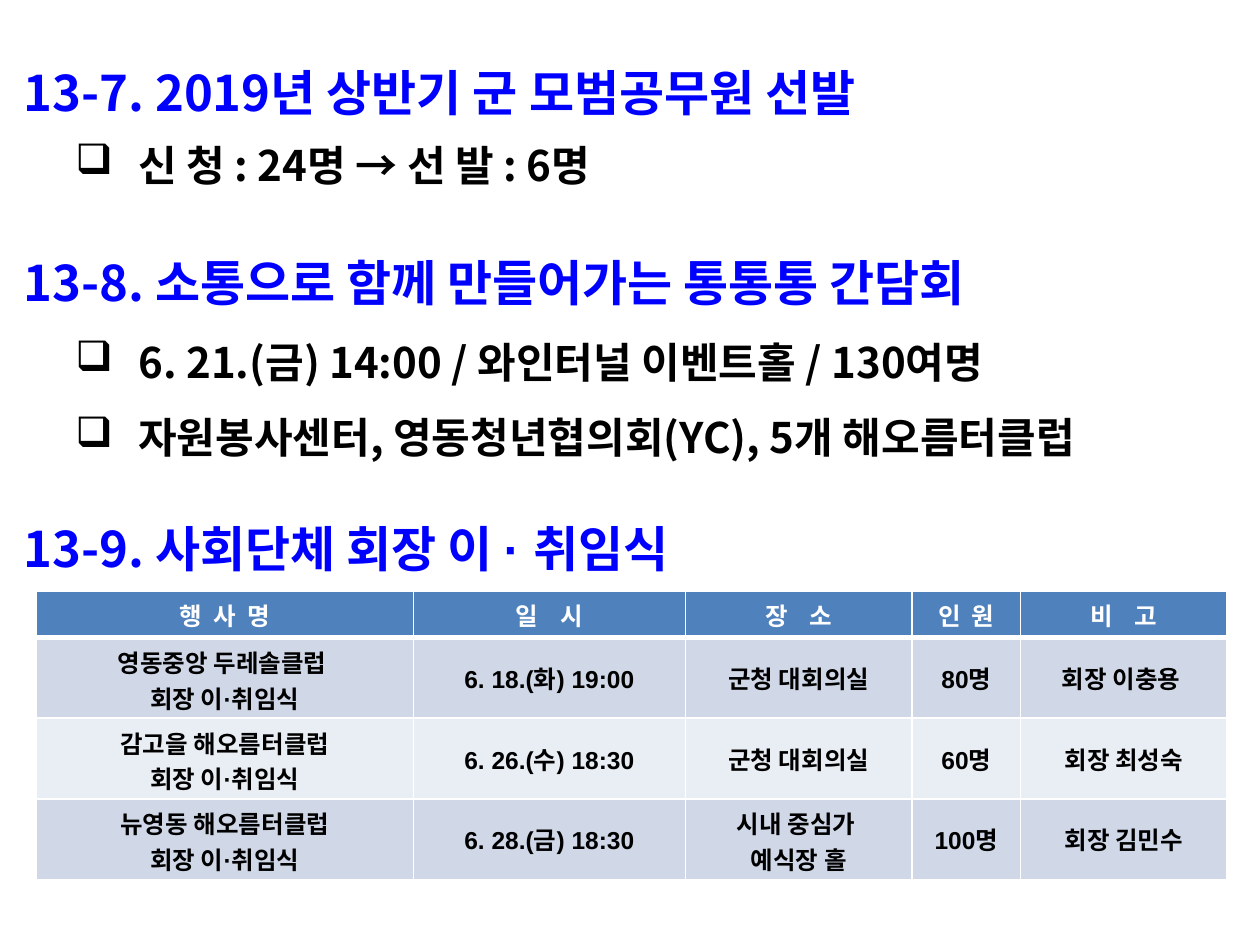
from lxml import etree
from pptx import Presentation
from pptx.dml.color import RGBColor
from pptx.enum.text import MSO_ANCHOR, PP_ALIGN
from pptx.oxml.ns import qn
from pptx.util import Inches, Pt

MIDDLE = MSO_ANCHOR.MIDDLE
CENTER = PP_ALIGN.CENTER

COLORS = {
    "heading": "0000FF",
    "text": "000000",
    "white": "FFFFFF",
    "header": "4F81BD",
    "band_dark": "D0D8E8",
    "band_light": "E9EDF4",
}


def rgb(name):
    return RGBColor.from_string(COLORS[name])


def add_solid_fill(parent, color):
    fill = etree.SubElement(parent, qn("a:solidFill"))
    etree.SubElement(fill, qn("a:srgbClr"), val=COLORS[color])


class SlideBuilder:
    body_font = "Noto Sans CJK KR"
    table_font = "Arial"
    heading_size = 28
    bullet_size = 24
    table_size = 14

    def __init__(self, slide):
        self.slide = slide

    def style(self, font, name, size, color):
        font.name = name
        font.size = Pt(size)
        font.bold = True
        font.color.rgb = rgb(color)

    def section(self, top, height, heading, bullets=(), heading_spacing=1.0,
                bullet_spacing=1.5, arial_tail=""):
        box = self.slide.shapes.add_textbox(
            Inches(0), Inches(top), Inches(10), Inches(height))
        frame = box.text_frame
        frame.word_wrap = True
        title = frame.paragraphs[0]
        title.line_spacing = heading_spacing
        self.style(title.font, self.body_font, self.heading_size, "heading")
        title.add_run().text = heading
        if arial_tail:
            tail = title.add_run()
            tail.text = arial_tail
            tail.font.name = self.table_font
        for text in bullets:
            self.bullet(frame.add_paragraph(), text, bullet_spacing)

    def bullet(self, paragraph, text, spacing):
        paragraph.text = text
        paragraph.level = 1
        paragraph.line_spacing = spacing
        props = paragraph._p.get_or_add_pPr()
        props.set("marL", str(Inches(1)))
        props.set("indent", str(Inches(-0.5)))
        color = etree.SubElement(props, qn("a:buClr"))
        etree.SubElement(color, qn("a:srgbClr"), val=COLORS["text"])
        etree.SubElement(props, qn("a:buChar"), char="❑")
        self.style(paragraph.font, self.body_font, self.bullet_size, "text")

    def table(self, left, top, widths, heights, rows):
        table = self.slide.shapes.add_table(
            len(rows), len(widths), Inches(left), Inches(top),
            Inches(sum(widths)), Inches(sum(heights))).table
        for column, width in zip(table.columns, widths):
            column.width = Inches(width)
        for r, (height, texts) in enumerate(zip(heights, rows)):
            table.rows[r].height = Inches(height)
            for c, text in enumerate(texts):
                self.cell(table.cell(r, c), text, r)

    def cell(self, cell, text, row):
        is_header = row == 0
        band = "band_dark" if row % 2 else "band_light"
        cell.text = text
        cell.vertical_anchor = MIDDLE
        for paragraph in cell.text_frame.paragraphs:
            paragraph.alignment = CENTER
            self.style(paragraph.font, self.table_font, self.table_size,
                       "white" if is_header else "text")
        # Borders come before the fill in the cell properties
        props = cell._tc.get_or_add_tcPr()
        widths = {"L": 1, "R": 1, "T": 3 if row == 1 else 1,
                  "B": 3 if is_header else 1}
        for side, width in widths.items():
            line = etree.SubElement(props, qn(f"a:ln{side}"), w=str(Pt(width)))
            add_solid_fill(line, "white")
        cell.fill.solid()
        cell.fill.fore_color.rgb = rgb("header" if is_header else band)


def main():
    prs = Presentation()
    prs.slide_width, prs.slide_height = Inches(10), Inches(7.5)
    builder = SlideBuilder(prs.slides.add_slide(prs.slide_layouts[6]))

    # Model civil servants
    builder.section(0.45, 1.17, " 13-7. 2019년 상반기 군 모범공무원 선발",
                    ["신 청 : 24명 → 선 발 : 6명"], bullet_spacing=1.35)

    # Community meeting
    builder.section(1.86, 1.89, " 13-8. 소통으로 함께 만들어가는 통통통 간담회",
                    ["6. 21.(금) 14:00 / 와인터널 이벤트홀 / 130여명",
                     "자원봉사센터, 영동청년협의회(YC), 5개 해오름터클럽"],
                    heading_spacing=1.2)

    # Inauguration ceremonies
    builder.section(3.83, 0.8, " 13-9. 사회단체 회장 이",
                    heading_spacing=1.5, arial_tail=" · 취임식")
    ceremony = "회장 이·취임식"
    builder.table(0.29, 4.69, [2.99, 2.16, 1.8, 0.86, 1.64],
                  [0.37, 0.64, 0.64, 0.64], [
        ["행  사  명", "일    시", "장    소", "인  원", "비    고"],
        [f"영동중앙 두레솔클럽 \n{ceremony}", "6. 18.(화) 19:00",
         "군청 대회의실", "80명", "회장 이충용 "],
        [f"감고을 해오름터클럽\n{ceremony}", "6. 26.(수) 18:30",
         "군청 대회의실", "60명", "회장 최성숙"],
        [f"뉴영동 해오름터클럽\n{ceremony}", "6. 28.(금) 18:30",
         "시내 중심가 \n예식장 홀", "100명", "회장 김민수"],
    ])

    prs.save("out.pptx")


if __name__ == "__main__":
    main()
